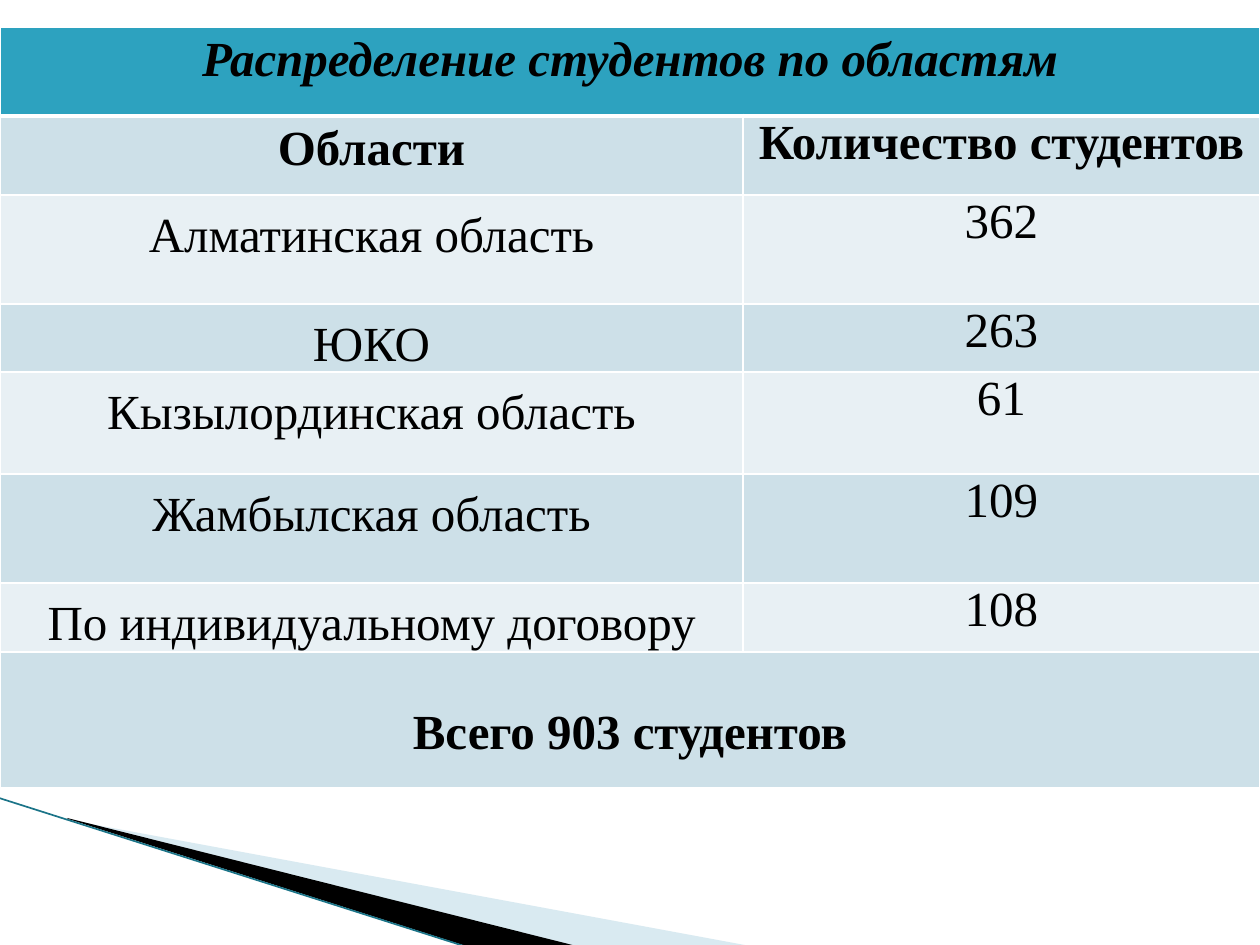
from lxml.etree import SubElement
from pptx import Presentation
from pptx.dml.color import RGBColor
from pptx.enum.shapes import MSO_CONNECTOR
from pptx.enum.text import PP_ALIGN
from pptx.oxml.ns import qn
from pptx.util import Pt

EMU_PER_PX = 914400 / 126
FONT = "Times New Roman"
HEADER, BAND_DARK, BAND_LIGHT = "2DA2BF", "CDE0E8", "E8F0F4"
COLUMN_WIDTHS = [743, 517]
ROW_HEIGHTS = [89, 79, 109, 68, 102, 109, 69, 136]
TITLE = "Распределение студентов по областям"
HEADINGS = ("Области", "Количество студентов")
REGIONS = [
    ("Алматинская область", "362"),
    ("ЮКО", "263"),
    ("Кызылординская область", "61"),
    ("Жамбылская область", "109"),
    ("По индивидуальному договору", "108"),
]
TOTAL = "Всего 903 студентов"


def px(value):
    return round(value * EMU_PER_PX)


def color(value):
    return RGBColor.from_string(value)


def add_wedge(slide, box, points, fill, opacity=100):
    """Draw a filled outline whose points are relative to the box."""
    left, top = box
    (start_x, start_y), *others = [(left + x, top + y) for x, y in points]
    builder = slide.shapes.build_freeform(start_x, start_y, scale=EMU_PER_PX)
    builder.add_line_segments(others, close=True)
    shape = builder.convert_to_shape()
    shape.shadow.inherit = False
    shape.fill.solid()
    shape.fill.fore_color.rgb = color(fill)
    shape.line.fill.background()
    if opacity < 100:
        rgb = shape._element.spPr.find(qn("a:solidFill"))[0]
        SubElement(rgb, qn("a:alpha"), val=str(opacity * 1000))


def add_corner(slide, left, top):
    """Draw the swoosh in the lower left corner of the slide."""
    add_wedge(slide, (left, top), [(69, 22), (750, 148), (575, 148), (69, 21)],
              "A0CBDC", opacity=40)
    add_wedge(slide, (left, top), [(67, 20), (576, 148), (469, 149), (68, 21)],
              "000000")
    edge = slide.shapes.add_connector(
        MSO_CONNECTOR.STRAIGHT,
        px(left - 1), px(top), px(left + 467), px(top + 149))
    edge.line.color.rgb = color("1B7488")
    edge.line.width = Pt(0.95)
    SubElement(edge._element.spPr, qn("a:effectLst"))


def set_borders(cell, bottom_width):
    properties = cell._tc.get_or_add_tcPr()
    for side, width in (("L", 1), ("R", 1), ("T", 1), ("B", bottom_width)):
        line = SubElement(properties, qn(f"a:ln{side}"), w=str(Pt(width)))
        fill = SubElement(line, qn("a:solidFill"))
        SubElement(fill, qn("a:srgbClr"), val="FFFFFF")


def fill_cell(cell, text, fill, bold=False, italic=False, spacing=None,
              margins=(9, 0), bottom_width=1):
    set_borders(cell, bottom_width)
    cell.fill.solid()
    cell.fill.fore_color.rgb = color(fill)
    side, top = margins
    cell.margin_left = cell.margin_right = px(side)
    cell.margin_top, cell.margin_bottom = px(top), 0
    cell.text_frame.text = text
    paragraph = cell.text_frame.paragraphs[0]
    paragraph.alignment = PP_ALIGN.CENTER
    if spacing:
        paragraph.line_spacing = spacing
    font = paragraph.runs[0].font
    font.name, font.size = FONT, Pt(28)
    font.bold, font.italic = bold, italic
    font.color.rgb = color("000000")


def add_region_table(slide, left, top):
    table = slide.shapes.add_table(
        len(ROW_HEIGHTS), len(COLUMN_WIDTHS), px(left), px(top),
        px(sum(COLUMN_WIDTHS)), px(sum(ROW_HEIGHTS))).table
    table.first_row = table.horz_banding = False
    for column, width in zip(table.columns, COLUMN_WIDTHS):
        column.width = px(width)
    for row, height in zip(table.rows, ROW_HEIGHTS):
        row.height = px(height)

    last = len(ROW_HEIGHTS) - 1
    for row in (0, last):
        table.cell(row, 0).merge(table.cell(row, 1))
    fill_cell(table.cell(0, 0), TITLE, HEADER, bold=True, italic=True,
              margins=(13, 6), bottom_width=3)
    fill_cell(table.cell(1, 0), HEADINGS[0], BAND_DARK, bold=True, margins=(13, 6))
    fill_cell(table.cell(1, 1), HEADINGS[1], BAND_DARK, bold=True)
    for row, (region, count) in enumerate(REGIONS, start=2):
        fill = BAND_DARK if row % 2 else BAND_LIGHT
        fill_cell(table.cell(row, 0), region, fill, spacing=1.25)
        fill_cell(table.cell(row, 1), count, fill)
    fill_cell(table.cell(last, 0), TOTAL, BAND_DARK, bold=True, margins=(9, 54))


def main():
    presentation = Presentation()
    presentation.slide_width, presentation.slide_height = px(1260), px(945)
    slide = presentation.slides.add_slide(presentation.slide_layouts[6])
    add_corner(slide, 0, 798)
    add_region_table(slide, 0, 27)
    presentation.save("out.pptx")


if __name__ == "__main__":
    main()
